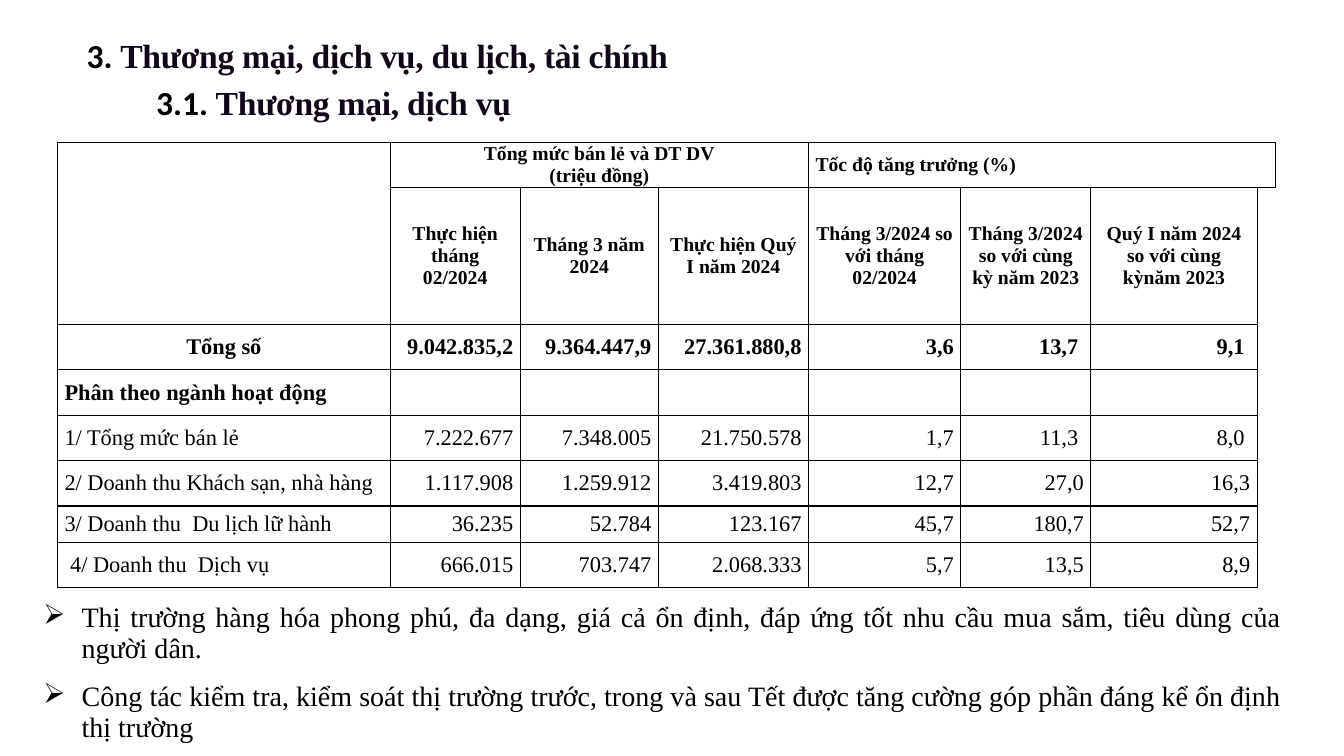
from copy import deepcopy

from lxml.etree import SubElement
from pptx import Presentation
from pptx.dml.color import RGBColor
from pptx.enum.text import MSO_ANCHOR as Anchor, MSO_AUTO_SIZE as AutoSize, PP_ALIGN as Align
from pptx.oxml.ns import qn
from pptx.util import Inches, Pt

SERIF, SANS = "Times New Roman", "Calibri"
BLACK, INK, WHITE = "000000", "100717", "FFFFFF"


def color(hex_code):
    return RGBColor.from_string(hex_code)


def write(paragraph, text, size=16, font=SERIF, ink=BLACK, bold=False, align=None, spacing=None):
    for index, line in enumerate(text.split("\n")):
        if index:
            paragraph.add_line_break()
        run = paragraph.add_run()
        run.text = line
        run.font.size, run.font.name, run.font.bold = Pt(size), font, bold
        run.font.color.rgb = color(ink)
        properties = run._r.get_or_add_rPr()
        if spacing is not None:
            properties.set("spc", str(spacing))
    for line_break in paragraph._p.findall(qn("a:br")):
        line_break.append(deepcopy(properties))
    if align is not None:
        paragraph.alignment = align


class ReportSlide:
    """Holds the slide and the style of its headings, tables and bullets."""

    def __init__(self, deck):
        self.slide = deck.slides.add_slide(deck.slide_layouts[5])
        self.title = self.slide.shapes.title

    def heading(self, number, text, left, top, shape=None):
        box = [Inches(v) for v in (left, top, 7.43, 0.5)]
        shape = shape or self.slide.shapes.add_textbox(*box)
        shape.left, shape.top, shape.width, shape.height = box
        frame = shape.text_frame
        frame.word_wrap, frame.auto_size = True, AutoSize.NONE
        frame.vertical_anchor = Anchor.TOP
        paragraph = frame.paragraphs[0]
        write(paragraph, number, size=24, font=SANS, bold=True, align=Align.LEFT)
        write(paragraph, text, size=24, ink=INK, bold=True, spacing=-20)

    def table(self, left, top, widths, heights):
        frame = self.slide.shapes.add_table(
            len(heights), len(widths), Inches(left), Inches(top),
            Inches(sum(widths)), Inches(sum(heights)))
        table = frame.table
        table.first_row = table.horz_banding = False
        for column, width in zip(table.columns, widths):
            column.width = Inches(width)
        for row, height in zip(table.rows, heights):
            row.height = Inches(height)
        return table

    def style_cell(self, cell, edges="", fill=None):
        cell.vertical_anchor = Anchor.MIDDLE
        properties = cell._tc.get_or_add_tcPr()
        for side in "LRTB":
            line = SubElement(properties, qn(f"a:ln{side}"), w=str(Pt(1)))
            if side in edges:
                solid = SubElement(line, qn("a:solidFill"))
                SubElement(solid, qn("a:srgbClr"), val=BLACK)
            else:
                SubElement(line, qn("a:noFill"))
        if fill:
            cell.fill.solid()
            cell.fill.fore_color.rgb = color(fill)
        else:
            cell.fill.background()

    def trade_table(self, groups, headers, rows):
        table = self.table(0.57, 1.41, [3.3, 1.29, 1.37, 1.49, 1.51, 1.29, 1.65, 0.1],
                           [0.45, 1.36, 0.45, 0.45, 0.45, 0.45, 0.36, 0.45])
        spacer = len(table.columns) - 1
        for r, row in enumerate(table.rows):
            for c, cell in enumerate(row.cells):
                cell.margin_left = cell.margin_right = Inches(0.07)
                cell.margin_top = cell.margin_bottom = 0
                edges = "LRTB" if c < spacer or r == 0 else "LT" if r == 1 else "L"
                filled = c < spacer and (r >= 5 or r == 1 and c > 0 or r == 3 and 0 < c < 4)
                self.style_cell(cell, edges, WHITE if filled else None)
        table.cell(0, 0).merge(table.cell(1, 0))
        for first, last, text, align in groups:
            table.cell(0, first).merge(table.cell(0, last))
            write(table.cell(0, first).text_frame.paragraphs[0], text, size=14, bold=True, align=align)
        for c, text in enumerate(headers, 1):
            write(table.cell(1, c).text_frame.paragraphs[0], text, size=14, bold=True, align=Align.CENTER)
        for r, (label, *values) in enumerate(rows, 2):
            bold = r < 4
            write(table.cell(r, 0).text_frame.paragraphs[0], label, bold=bold,
                  align=Align.CENTER if r == 2 else Align.LEFT)
            for c, value in enumerate(values, 1):
                write(table.cell(r, c).text_frame.paragraphs[0], value, bold=bold, align=Align.RIGHT)

    def remarks(self, texts):
        cell = self.table(0.33, 5.9, [12.48], [1.55]).cell(0, 0)
        self.style_cell(cell)
        frame = cell.text_frame
        for index, text in enumerate(texts):
            paragraph = frame.add_paragraph() if index else frame.paragraphs[0]
            paragraph.space_after = Pt(12)
            properties = paragraph._p.get_or_add_pPr()
            properties.set("marL", str(Inches(0.38)))
            properties.set("indent", str(Inches(-0.38)))
            SubElement(properties, qn("a:buChar"), char="➢")
            write(paragraph, text, size=20, align=Align.JUSTIFY)


def main():
    deck = Presentation()
    deck.slide_width, deck.slide_height = Inches(13.33), Inches(7.5)
    report = ReportSlide(deck)
    report.heading("3. ", "Thương mại, dịch vụ, du lịch, tài chính", 0.76, 0.3, report.title)
    report.heading("3.1. ", "Thương mại, dịch vụ", 1.45, 0.76)
    report.trade_table(
        [(1, 3, "Tổng mức bán lẻ và DT DV\n(triệu đồng)", Align.CENTER),
         (4, 7, "Tốc độ tăng trưởng (%)", Align.LEFT)],
        ["Thực hiện tháng 02/2024", "Tháng 3 năm 2024", "Thực hiện Quý I năm 2024",
         "Tháng 3/2024 so với tháng 02/2024", "Tháng 3/2024 so với cùng kỳ năm 2023",
         "Quý I năm 2024 so với cùng kỳnăm 2023"],
        [("Tổng số", "9.042.835,2", "9.364.447,9", "27.361.880,8", "3,6", "13,7 ", "9,1 "),
         ("Phân theo ngành hoạt động",),
         ("1/ Tổng mức bán lẻ", "7.222.677", "7.348.005", "21.750.578", "1,7", "11,3 ", "8,0 "),
         ("2/ Doanh thu Khách sạn, nhà hàng", "1.117.908", "1.259.912", "3.419.803", "12,7", "27,0", "16,3"),
         ("3/ Doanh thu  Du lịch lữ hành", "36.235", "52.784", "123.167", "45,7", "180,7", "52,7"),
         (" 4/ Doanh thu  Dịch vụ", "666.015", "703.747", "2.068.333", "5,7", "13,5", "8,9")])
    report.remarks([
        "Thị trường hàng hóa phong phú, đa dạng, giá cả ổn định, đáp ứng tốt nhu cầu mua sắm, "
        "tiêu dùng của người dân.",
        "Công tác kiểm tra, kiểm soát thị trường trước, trong và sau Tết được tăng cường góp phần "
        "đáng kể ổn định thị trường"])
    deck.save("out.pptx")


if __name__ == "__main__":
    main()
